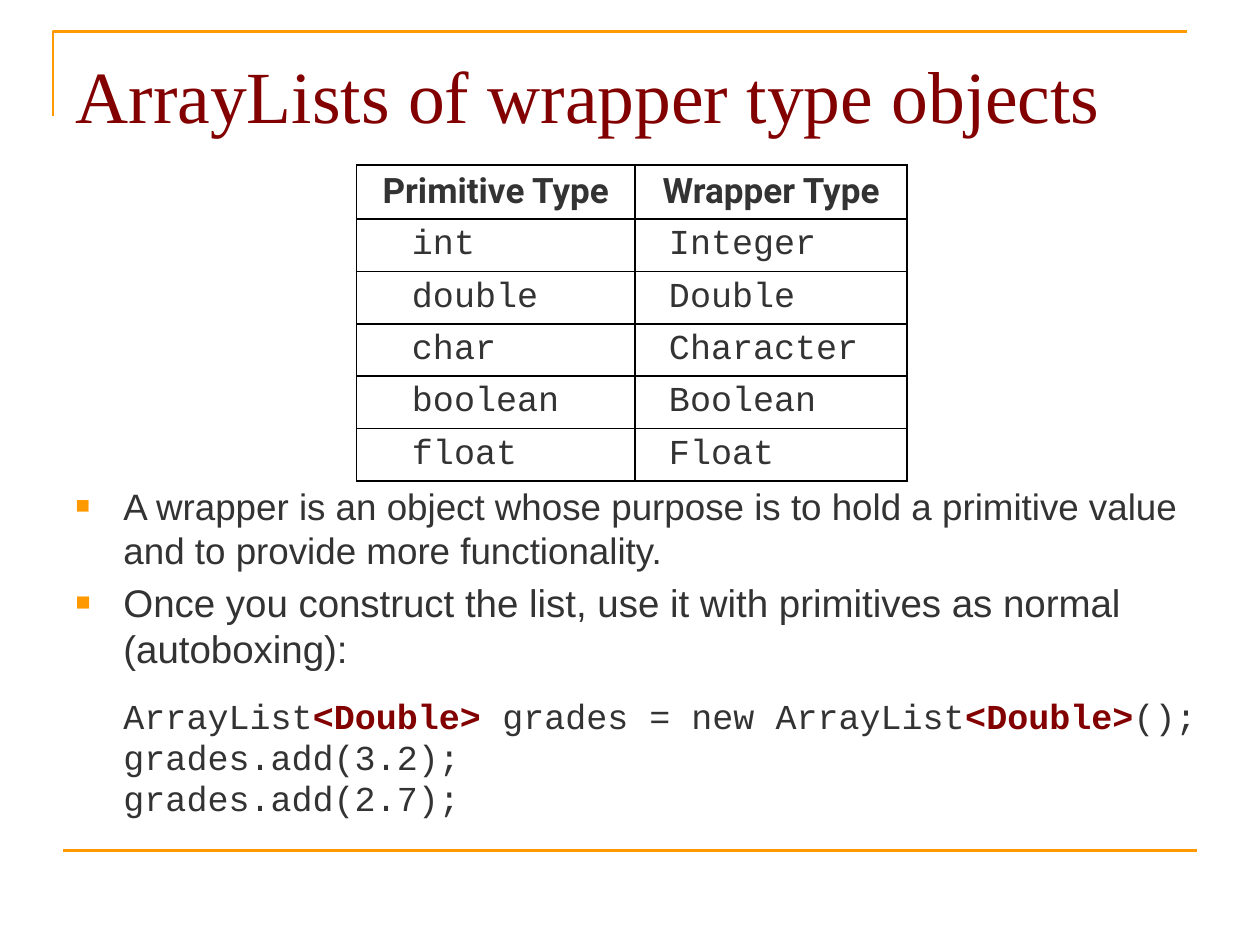
from lxml.etree import SubElement
from pptx import Presentation
from pptx.dml.color import RGBColor
from pptx.enum.shapes import MSO_CONNECTOR
from pptx.enum.text import MSO_ANCHOR, MSO_AUTO_SIZE, PP_ALIGN
from pptx.oxml.ns import qn
from pptx.util import Inches, Pt

# Content
TITLE = "ArrayLists of wrapper type objects"
TYPES = [
    ("Primitive Type", "Wrapper Type"),
    ("int", "Integer"),
    ("double", "Double"),
    ("char", "Character"),
    ("boolean", "Boolean"),
    ("float", "Float"),
]
# Bullets: text, size, line pitch, space before (points)
BULLETS = [
    ("A wrapper is an object whose purpose is to hold a primitive value "
     "and to provide more functionality.", 21, 25.1, 0),
    ("Once you construct the list, use it with primitives as normal "
     "(autoboxing):", 22, 26.3, 4),
]
# Code lines: pieces of (text, highlighted)
CODE = [
    [("ArrayList", False), ("<Double> ", True), ("grades = new ArrayList", False),
     ("<Double>", True), ("();", False)],
    [("grades.add(3.2);", False)],
    [("grades.add(2.7);", False)],
]
CODE_SIZE, CODE_PITCH, CODE_GAP = 20, 23.4, 14

COLORS = {"accent": "FF9900", "title": "820000", "text": "333333", "border": "000000"}
FONTS = {"title": "Times New Roman", "body": "Arial", "code": "Courier New",
         "header": "Roboto"}

# Table grid, in inches
TABLE_LEFT, TABLE_TOP = 2.83, 1.31
COLUMN_WIDTHS = [2.21, 2.16]
CELL_INDENTS = [0.44, 0.27]
HEADER_HEIGHT, ROW_HEIGHT = 0.43, 0.41
BULLET_INDENT = 0.38


def color(name):
    return RGBColor.from_string(COLORS[name])


def style_run(run, size, font, color_name="text", bold=False):
    run.font.size = Pt(size)
    run.font.name = FONTS[font]
    run.font.color.rgb = color(color_name)
    run.font.bold = bold


def style_line(shape):
    shape.line.color.rgb = color("accent")
    shape.line.width = Pt(1.5)


def place(shape, left, top, width, height):
    shape.left, shape.top = Inches(left), Inches(top)
    shape.width, shape.height = Inches(width), Inches(height)


def format_paragraph(paragraph, pitch, before, bullet=False):
    paragraph.line_spacing = Pt(pitch)
    paragraph.space_before = Pt(before)
    paragraph.space_after = Pt(0)
    properties = paragraph._p.get_or_add_pPr()
    properties.set("marL", str(Inches(BULLET_INDENT)))
    properties.set("indent", str(-Inches(BULLET_INDENT) if bullet else 0))
    if not bullet:
        SubElement(properties, qn("a:buNone"))
        return
    bullet_color = SubElement(properties, qn("a:buClr"))
    SubElement(bullet_color, qn("a:srgbClr"), val=COLORS["accent"])
    SubElement(properties, qn("a:buSzPct"), val="65000")
    SubElement(properties, qn("a:buFont"), typeface=FONTS["body"])
    SubElement(properties, qn("a:buChar"), char="■")


def add_borders(cell):
    properties = cell._tc.get_or_add_tcPr()
    for side in ("lnL", "lnR", "lnT", "lnB"):
        line = SubElement(properties, qn(f"a:{side}"), w=str(Pt(1)))
        fill = SubElement(line, qn("a:solidFill"))
        SubElement(fill, qn("a:srgbClr"), val=COLORS["border"])


def add_frame(slide):
    builder = slide.shapes.build_freeform(Inches(0.42), Inches(0.92))
    builder.add_line_segments(
        [(Inches(0.42), Inches(0.25)), (Inches(9.42), Inches(0.25))], close=False)
    corner = builder.convert_to_shape()
    corner.shadow.inherit = False
    corner.fill.background()
    style_line(corner)

    footer = slide.shapes.add_connector(
        MSO_CONNECTOR.STRAIGHT, Inches(0.5), Inches(6.75), Inches(9.5), Inches(6.75))
    style_line(footer)
    SubElement(footer._element.spPr, qn("a:effectLst"))


def fill_title(title):
    place(title, 0.5, 0.3, 9, 1.03)
    frame = title.text_frame
    frame.text = TITLE
    frame.auto_size = MSO_AUTO_SIZE.NONE
    frame.vertical_anchor = MSO_ANCHOR.MIDDLE
    frame.margin_bottom = Inches(0.18)
    paragraph = frame.paragraphs[0]
    paragraph.alignment = PP_ALIGN.LEFT
    style_run(paragraph.runs[0], 42, "title", "title")


def fill_body(body):
    place(body, 0.5, 3.79, 9.25, 2.9)
    frame = body.text_frame
    frame.auto_size = MSO_AUTO_SIZE.NONE
    frame.vertical_anchor = MSO_ANCHOR.TOP
    for index, (text, size, pitch, before) in enumerate(BULLETS):
        paragraph = frame.add_paragraph() if index else frame.paragraphs[0]
        paragraph.text = text
        format_paragraph(paragraph, pitch, before, bullet=True)
        style_run(paragraph.runs[0], size, "body")
    for index, pieces in enumerate(CODE):
        paragraph = frame.add_paragraph()
        format_paragraph(paragraph, CODE_PITCH, 0 if index else CODE_GAP)
        for text, highlighted in pieces:
            run = paragraph.add_run()
            run.text = text
            style_run(run, CODE_SIZE, "code", "title" if highlighted else "text",
                      highlighted)


def add_type_table(slide):
    heights = [HEADER_HEIGHT] + [ROW_HEIGHT] * (len(TYPES) - 1)
    table = slide.shapes.add_table(
        len(TYPES), len(COLUMN_WIDTHS), Inches(TABLE_LEFT), Inches(TABLE_TOP),
        Inches(sum(COLUMN_WIDTHS)), Inches(sum(heights))).table
    table.first_row = table.horz_banding = False
    for column, width in zip(table.columns, COLUMN_WIDTHS):
        column.width = Inches(width)
    for row_index, values in enumerate(TYPES):
        table.rows[row_index].height = Inches(heights[row_index])
        for column_index, text in enumerate(values):
            cell = table.cell(row_index, column_index)
            cell.text = text
            add_borders(cell)
            cell.fill.background()
            paragraph = cell.text_frame.paragraphs[0]
            if row_index == 0:
                paragraph.alignment = PP_ALIGN.CENTER
                style_run(paragraph.runs[0], 20, "header", bold=True)
            else:
                cell.margin_left = Inches(CELL_INDENTS[column_index])
                style_run(paragraph.runs[0], 20, "code")


def main():
    presentation = Presentation()
    presentation.slide_width, presentation.slide_height = Inches(10), Inches(7.5)
    slide = presentation.slides.add_slide(presentation.slide_layouts[1])
    add_frame(slide)
    fill_title(slide.shapes.title)
    fill_body(slide.placeholders[1])
    add_type_table(slide)
    presentation.save("out.pptx")


if __name__ == "__main__":
    main()
